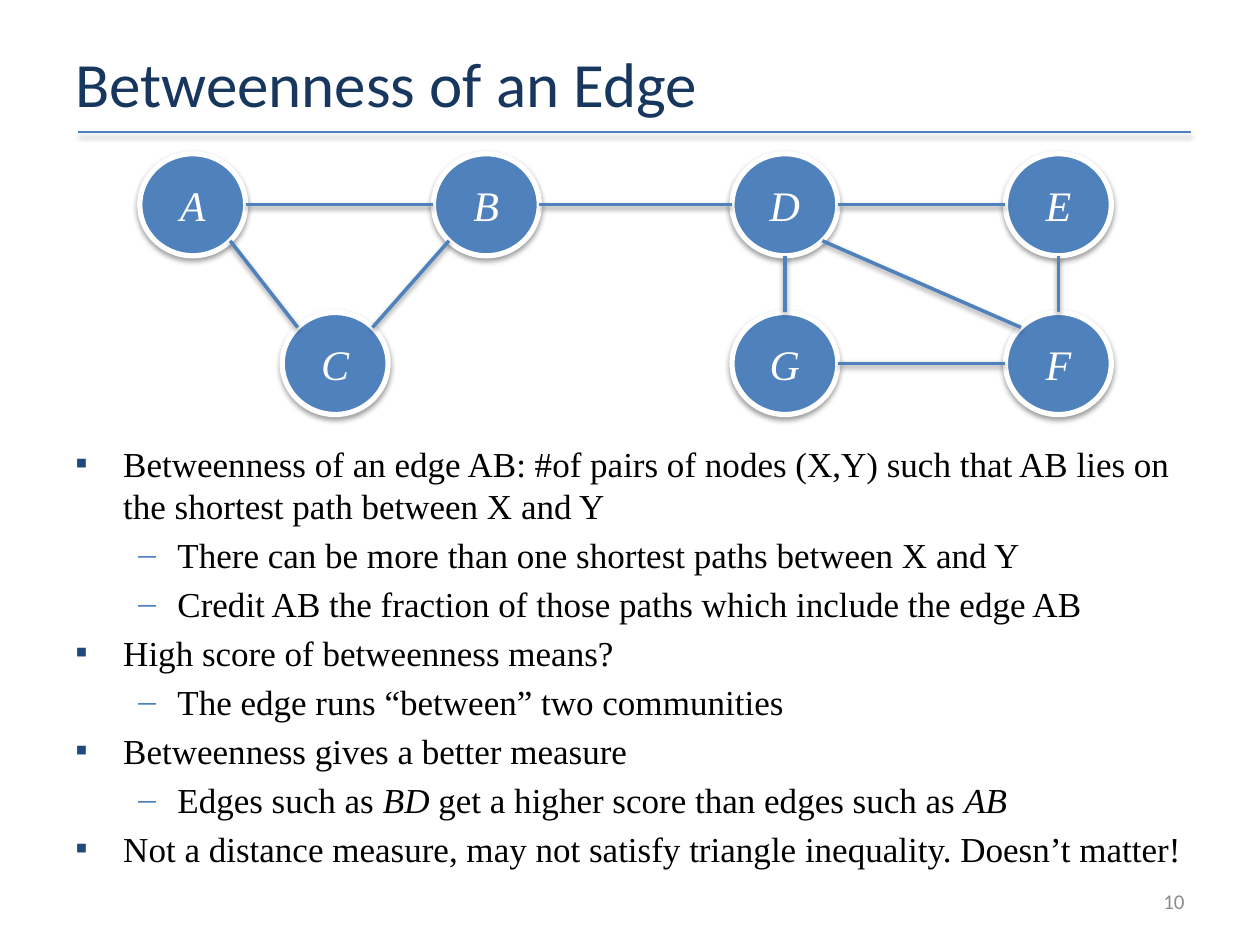
"""Build the slide on edge betweenness: a seven-node graph above its explanation."""
import math
import pptx
import pptx.dml.color
import pptx.enum.shapes
import pptx.enum.text
import pptx.oxml
import pptx.oxml.ns
import pptx.util
from pptx.util import Inches

ALIGN = pptx.enum.text.PP_ALIGN
MIDDLE = pptx.enum.text.MSO_ANCHOR.MIDDLE
THEME = {
    "blue": "4F81BD",
    "white": "FFFFFF",
    "title": {"name": "Calibri", "size": pptx.util.Pt(36), "color": "17375E"},
    "body": {"name": "Times New Roman", "size": pptx.util.Pt(20), "color": "000000"},
    "node": {"name": "Times New Roman", "size": pptx.util.Pt(24), "color": "FFFFFF", "italic": True},
    "number": {"name": "Calibri", "size": pptx.util.Pt(12), "color": "8C8C8C"},
}
SHADOW = (
    f'<a:effectLst {pptx.oxml.ns.nsdecls("a")}>'
    '<a:outerShdw blurRad="40000" dist="20000" dir="5400000" rotWithShape="0">'
    '<a:srgbClr val="000000"><a:alpha val="38000"/></a:srgbClr>'
    '</a:outerShdw></a:effectLst>'
)


def write(paragraph, text, style, **extra):
    run = paragraph.add_run()
    run.text = text
    for attribute, value in {**style, **extra}.items():
        if attribute == "color":
            run.font.color.rgb = pptx.dml.color.RGBColor.from_string(value)
        else:
            setattr(run.font, attribute, value)


def outline(shape, color, width):
    shape.line.color.rgb = pptx.dml.color.RGBColor.from_string(color)
    shape.line.width = pptx.util.Pt(width)
    shape._element.spPr.append(pptx.oxml.parse_xml(SHADOW))


presentation = pptx.Presentation()
presentation.slide_width, presentation.slide_height = Inches(10), Inches(7.5)
slide = presentation.slides.add_slide(presentation.slide_layouts[6])
straight = pptx.enum.shapes.MSO_CONNECTOR.STRAIGHT

rule = slide.shapes.add_connector(straight, Inches(0.62), Inches(1.05), Inches(9.45), Inches(1.05))
outline(rule, THEME["blue"], 1)

labels = [
    ("Betweenness of an Edge", "title", (0.5, 0.3, 9, 0.71), ALIGN.LEFT),
    ("10", "number", (7.17, 6.95, 2.33, 0.4), ALIGN.RIGHT),
]
for text, style, box, alignment in labels:
    frame = slide.shapes.add_textbox(*map(Inches, box)).text_frame
    for attribute, value in {"word_wrap": True, "vertical_anchor": MIDDLE}.items():
        setattr(frame, attribute, value)
    frame.paragraphs[0].alignment = alignment
    write(frame.paragraphs[0], text, THEME[style])

levels = [
    {"margin": 0.38, "hanging": 0.38, "bullet": "▪", "color": "1F497D"},
    {"margin": 0.81, "hanging": 0.31, "bullet": "–", "color": THEME["blue"]},
]
points = [
    (0, ["Betweenness of an edge AB: #of pairs of nodes (X,Y) such that AB lies on "
         "the shortest path between X and Y"]),
    (1, ["There can be more than one shortest paths between X and Y"]),
    (1, ["Credit AB the fraction of those paths which include the edge AB"]),
    (0, ["High score of betweenness means?"]),
    (1, ["The edge runs “between” two communities"]),
    (0, ["Betweenness gives a better measure"]),
    (1, ["Edges such as ", "BD ", "get a higher score than edges such as ", "AB"]),
    (0, ["Not a distance measure, may not satisfy triangle inequality. Doesn’t matter!"]),
]
body = slide.shapes.add_textbox(Inches(0.5), Inches(3.46), Inches(9), Inches(3.54)).text_frame
body.word_wrap = True
for index, (level, parts) in enumerate(points):
    paragraph = body.add_paragraph() if index else body.paragraphs[0]
    for attribute, value in {"level": level, "space_before": pptx.util.Pt(4)}.items():
        setattr(paragraph, attribute, value)
    look = levels[level]
    properties = paragraph._p.get_or_add_pPr()
    properties.set("marL", str(Inches(look["margin"])))
    properties.set("indent", str(-Inches(look["hanging"])))
    for tag, content in [
        ("buClr", f'><a:srgbClr val="{look["color"]}"/></a:buClr>'),
        ("buFont", ' typeface="Times New Roman"/>'),
        ("buChar", f' char="{look["bullet"]}"/>'),
    ]:
        properties.append(pptx.oxml.parse_xml(f'<a:{tag} {pptx.oxml.ns.nsdecls("a")}{content}'))
    for position, text in enumerate(parts):
        write(paragraph, text, THEME["body"], italic=position % 2 == 1)

width, height = 0.84, 0.81
top_row, bottom_row = 1.22, 2.48
nodes = {
    "A": (1.11, top_row), "B": (3.44, top_row), "C": (2.24, bottom_row),
    "D": (5.81, top_row), "E": (7.98, top_row),
    "G": (5.81, bottom_row), "F": (7.98, bottom_row),
}
graph = slide.shapes.add_group_shape()
for name, (left, top) in nodes.items():
    node = graph.shapes.add_shape(
        pptx.enum.shapes.MSO_SHAPE.OVAL, Inches(left), Inches(top), Inches(width), Inches(height))
    node.fill.solid()
    node.fill.fore_color.rgb = pptx.dml.color.RGBColor.from_string(THEME["blue"])
    outline(node, THEME["white"], 3)
    node.text_frame.vertical_anchor = MIDDLE
    node.text_frame.paragraphs[0].alignment = ALIGN.CENTER
    write(node.text_frame.paragraphs[0], name, THEME["node"])

for start, end in ["AB", "AC", "BC", "DB", "DG", "DE", "GF", "DF", "EF"]:
    (start_x, start_y), (end_x, end_y) = nodes[start], nodes[end]
    across = (end_x > start_x) - (end_x < start_x)
    down = (end_y > start_y) - (end_y < start_y)
    reach = 0.5 / math.hypot(across, down)
    shift_x, shift_y = across * reach * width, down * reach * height
    center_x, center_y = width / 2, height / 2
    edge = graph.shapes.add_connector(
        straight,
        Inches(start_x + center_x + shift_x), Inches(start_y + center_y + shift_y),
        Inches(end_x + center_x - shift_x), Inches(end_y + center_y - shift_y))
    outline(edge, THEME["blue"], 2)

presentation.save("out.pptx")
